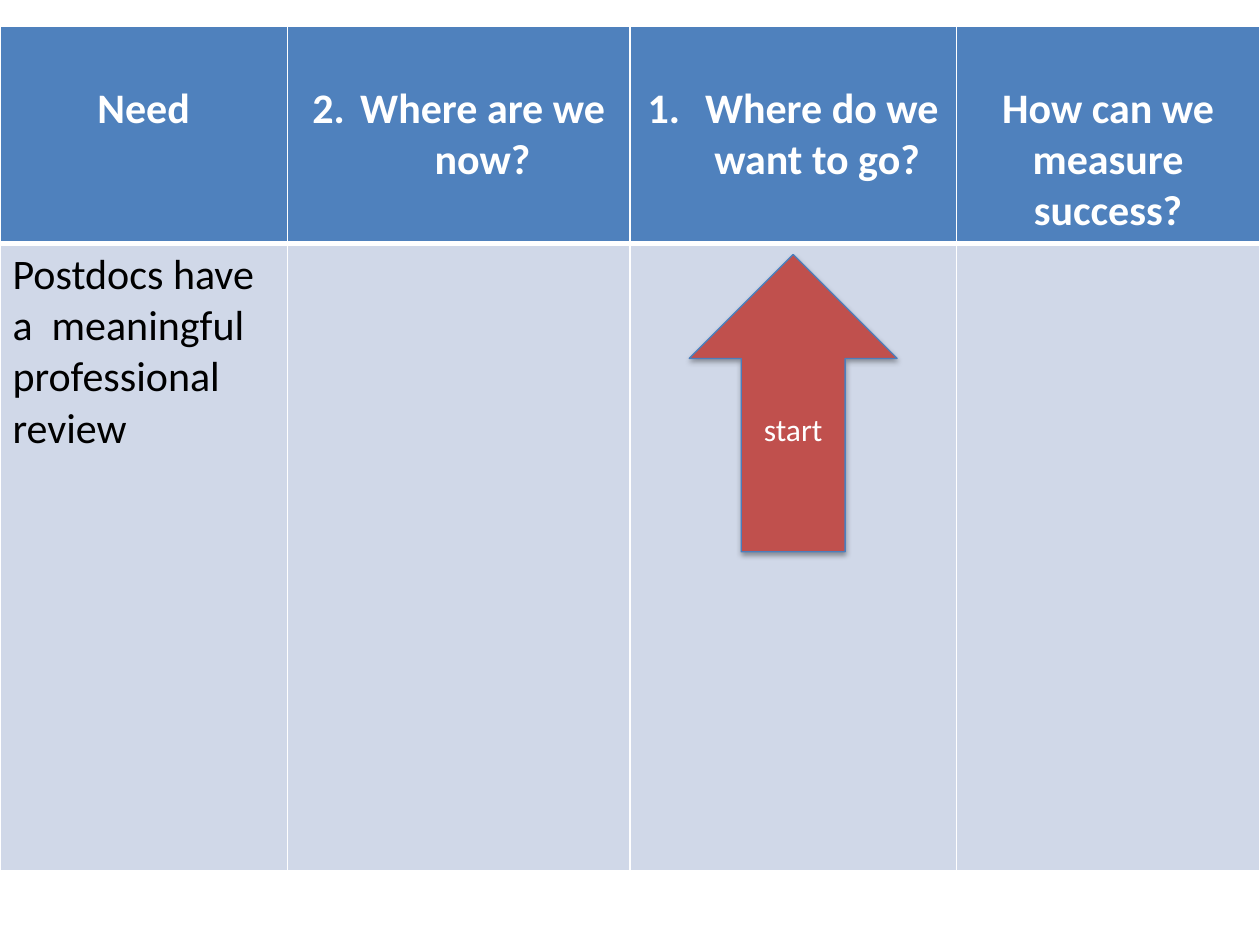
from dataclasses import dataclass

from lxml.etree import SubElement
from pptx import Presentation
from pptx.dml.color import RGBColor as Rgb
from pptx.enum.shapes import MSO_SHAPE as Preset
from pptx.enum.text import MSO_ANCHOR as Anchor, PP_ALIGN as Align
from pptx.oxml.ns import qn
from pptx.util import Inches, Pt


@dataclass(frozen=True)
class Theme:
    """Colours, font and type sizes of the slide."""
    font: str = "Calibri"
    table_size: int = 24
    arrow_size: int = 18
    white: str = "FFFFFF"
    black: str = "000000"
    header: str = "4F81BD"
    body: str = "D0D8E8"
    arrow: str = "C0504D"
    arrow_edge: str = "4B7EBC"


THEME = Theme()
COLUMN_WIDTHS = (2.28, 2.72, 2.59, 2.41)
ROW_HEIGHTS = (1.71, 4.98)
QUESTIONS = (
    ("Need", None),
    ("Where are we now?", 2),
    (" Where do we want to go?", 1),
    ("How can we measure success?", None),
)
ANSWERS = ("Postdocs have a  meaningful professional review", "", "", "")


def write(frame, text, size=THEME.table_size, color=THEME.black, bold=False,
          align=Align.LEFT, number=None):
    """Write one formatted paragraph, numbered if a number is given."""
    paragraph = frame.paragraphs[0]
    paragraph.alignment = align
    if number:
        properties = paragraph._p.get_or_add_pPr()
        indent = Inches(0.38)
        properties.set("marL", str(indent))
        properties.set("indent", str(-indent))
        SubElement(properties, qn("a:buFont"), typeface=THEME.font)
        SubElement(properties, qn("a:buAutoNum"), type="arabicPeriod",
                   startAt=str(number))
    run = paragraph.add_run()
    run.text = text
    run.font.name = THEME.font
    run.font.size = Pt(size)
    run.font.bold = bold
    run.font.color.rgb = Rgb.from_string(color)


def style_cell(cell, fill, top=1, bottom=1):
    """Give a cell white borders and a solid fill."""
    properties = cell._tc.get_or_add_tcPr()
    for side, width in (("L", 1), ("R", 1), ("T", top), ("B", bottom)):
        border = SubElement(properties, qn(f"a:ln{side}"), w=str(Pt(width)))
        solid = SubElement(border, qn("a:solidFill"))
        SubElement(solid, qn("a:srgbClr"), val=THEME.white)
    cell.fill.solid()
    cell.fill.fore_color.rgb = Rgb.from_string(fill)


def add_planning_table(slide, left, top, width, height):
    """Place the table of needs and planning questions."""
    table = slide.shapes.add_table(
        len(ROW_HEIGHTS), len(COLUMN_WIDTHS), left, top, width, height).table
    table.horz_banding = False
    for row, share in zip(table.rows, ROW_HEIGHTS):
        row.height = int(height * share / sum(ROW_HEIGHTS))
    for column, share in zip(table.columns, COLUMN_WIDTHS):
        column.width = int(width * share / sum(COLUMN_WIDTHS))
    for index, ((question, number), answer) in enumerate(zip(QUESTIONS, ANSWERS)):
        heading, body = table.cell(0, index), table.cell(1, index)
        style_cell(heading, THEME.header, bottom=3)
        style_cell(body, THEME.body, top=3)
        heading.margin_top = Inches(0.45)
        write(heading.text_frame, question, color=THEME.white, bold=True,
              align=Align.CENTER, number=number)
        if answer:
            write(body.text_frame, answer)


def add_start_arrow(slide, left, top, width, height):
    """Place the shadowed arrow that marks the starting question."""
    arrow = slide.shapes.add_shape(Preset.UP_ARROW, left, top, width, height)
    arrow.fill.solid()
    arrow.fill.fore_color.rgb = Rgb.from_string(THEME.arrow)
    arrow.line.color.rgb = Rgb.from_string(THEME.arrow_edge)
    arrow.line.width = Pt(0.75)
    arrow.shadow.inherit = False
    effects = arrow._element.spPr.find(qn("a:effectLst"))
    shadow = SubElement(effects, qn("a:outerShdw"), blurRad=str(Pt(3.1)),
                        dist=str(Pt(1.8)), dir="5400000", rotWithShape="0")
    tint = SubElement(shadow, qn("a:srgbClr"), val=THEME.black)
    SubElement(tint, qn("a:alpha"), val="35000")
    arrow.text_frame.word_wrap = True
    arrow.text_frame.vertical_anchor = Anchor.MIDDLE
    write(arrow.text_frame, "start", size=THEME.arrow_size,
          color=THEME.white, align=Align.CENTER)


def main():
    """Build and save the planning slide."""
    deck = Presentation()
    deck.slide_width, deck.slide_height = Inches(10), Inches(7.5)
    slide = deck.slides.add_slide(deck.slide_layouts.get_by_name("Blank"))
    add_planning_table(slide, Inches(0), Inches(0.21), deck.slide_width,
                       Inches(sum(ROW_HEIGHTS)))
    add_start_arrow(slide, Inches(5.47), Inches(2.02), Inches(1.65), Inches(2.36))
    deck.save("out.pptx")


if __name__ == "__main__":
    main()
